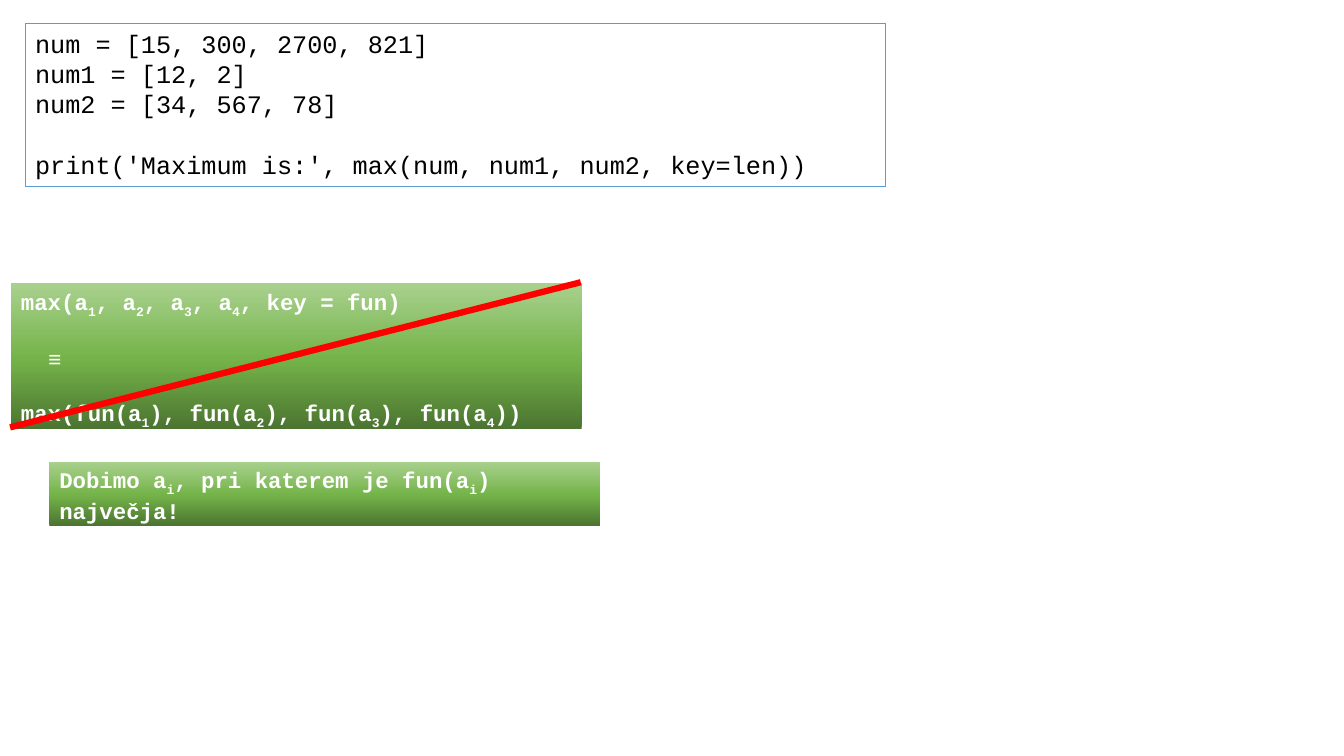
from copy import deepcopy

from pptx import Presentation
from pptx.dml.color import RGBColor
from pptx.enum.shapes import MSO_CONNECTOR, MSO_SHAPE
from pptx.enum.text import MSO_ANCHOR, MSO_AUTO_SIZE, PP_ALIGN
from pptx.oxml.ns import qn
from pptx.util import Inches, Pt

FONT = "Courier New"
LINE_HEIGHT = 1.2
GREEN_STOPS = [(0, "4B7430"), (0.48, "74B349"), (1, "A9D18E")]


def color(hex_text):
    return RGBColor.from_string(hex_text)


def add_box(page, left, top, width, height):
    box = page.shapes.add_shape(MSO_SHAPE.RECTANGLE, Inches(left), Inches(top),
                                Inches(width), Inches(height))
    box.shadow.inherit = False
    frame = box.text_frame
    frame.word_wrap = True
    frame.auto_size = MSO_AUTO_SIZE.NONE
    frame.vertical_anchor = MSO_ANCHOR.TOP
    return box


def add_paragraph(frame, text, size, text_color, bold=False, lines_above=0, indent=0):
    """Write one line; a character after "_" becomes a subscript."""
    first = frame.paragraphs[0]
    para = frame.add_paragraph() if first.runs else first
    para.alignment = PP_ALIGN.LEFT
    para.space_before = Pt(lines_above * size * LINE_HEIGHT)
    para.font.name = FONT
    para.font.size = Pt(size)
    para.font.bold = bold
    para.font.color.rgb = color(text_color)
    if indent:
        para._p.get_or_add_pPr().set("marL", str(Inches(indent)))
    start, *pieces = text.split("_")
    para.add_run().text = start
    for piece in pieces:
        subscript = para.add_run()
        subscript.text = piece[0]
        subscript.font._rPr.set("baseline", "-25000")
        para.add_run().text = piece[1:]


def fill_green(box):
    box.line.fill.background()
    box.fill.gradient()
    box.fill.gradient_angle = 90
    stop_list = box._element.spPr.find(".//" + qn("a:gsLst"))
    stop_list.append(deepcopy(stop_list[-1]))
    for stop, (position, hex_text) in zip(box.fill.gradient_stops, GREEN_STOPS):
        stop.position = position
        stop.color.rgb = color(hex_text)


def add_code(page, left, top, width, height):
    box = add_box(page, left, top, width, height)
    box.fill.background()
    box.line.color.rgb = color("5B9BD5")
    box.line.width = Pt(0.75)
    for text, lines_above in [
        ("num = [15, 300, 2700, 821]", 0),
        ("num1 = [12, 2]", 0),
        ("num2 = [34, 567, 78]", 0),
        ("print('Maximum is:', max(num, num1, num2, key=len))", 1),
    ]:
        add_paragraph(box.text_frame, text, 18, "000000", lines_above=lines_above)


def add_green_note(page, left, top, width, height, lines):
    """Place a green box; each line is its text, lines left free above and indent."""
    box = add_box(page, left, top, width, height)
    fill_green(box)
    for text, lines_above, indent in lines:
        add_paragraph(box.text_frame, text, 16, "FFFFFF", True, lines_above, indent)


def add_strike(page, left, top, width, height):
    """Cross out a region from its top right to its bottom left corner."""
    strike = page.shapes.add_connector(
        MSO_CONNECTOR.STRAIGHT, Inches(left + width), Inches(top),
        Inches(left), Inches(top + height))
    strike.line.color.rgb = color("FF0000")
    strike.line.width = Pt(4.5)
    properties = strike._element.spPr
    properties.append(properties.makeelement(qn("a:effectLst"), {}))


def main():
    deck = Presentation()
    deck.slide_width = Inches(13.33)
    deck.slide_height = Inches(7.5)
    page = deck.slides.add_slide(deck.slide_layouts[6])

    add_code(page, 0.25, 0.23, 8.53, 1.62)
    add_green_note(page, 0.11, 2.81, 5.66, 1.45, [
        ("max(a_1, a_2, a_3, a_4, key = fun)", 0, 0),
        ("≡", 1, 0.27),
        ("max(fun(a_1), fun(a_2), fun(a_3), fun(a_4))", 1, 0),
    ])
    add_strike(page, 0.1, 2.8, 5.66, 1.44)
    add_green_note(page, 0.49, 4.58, 5.46, 0.64, [
        ("Dobimo a_i, pri katerem je fun(a_i) največja!", 0, 0),
    ])
    deck.save("out.pptx")


if __name__ == "__main__":
    main()
